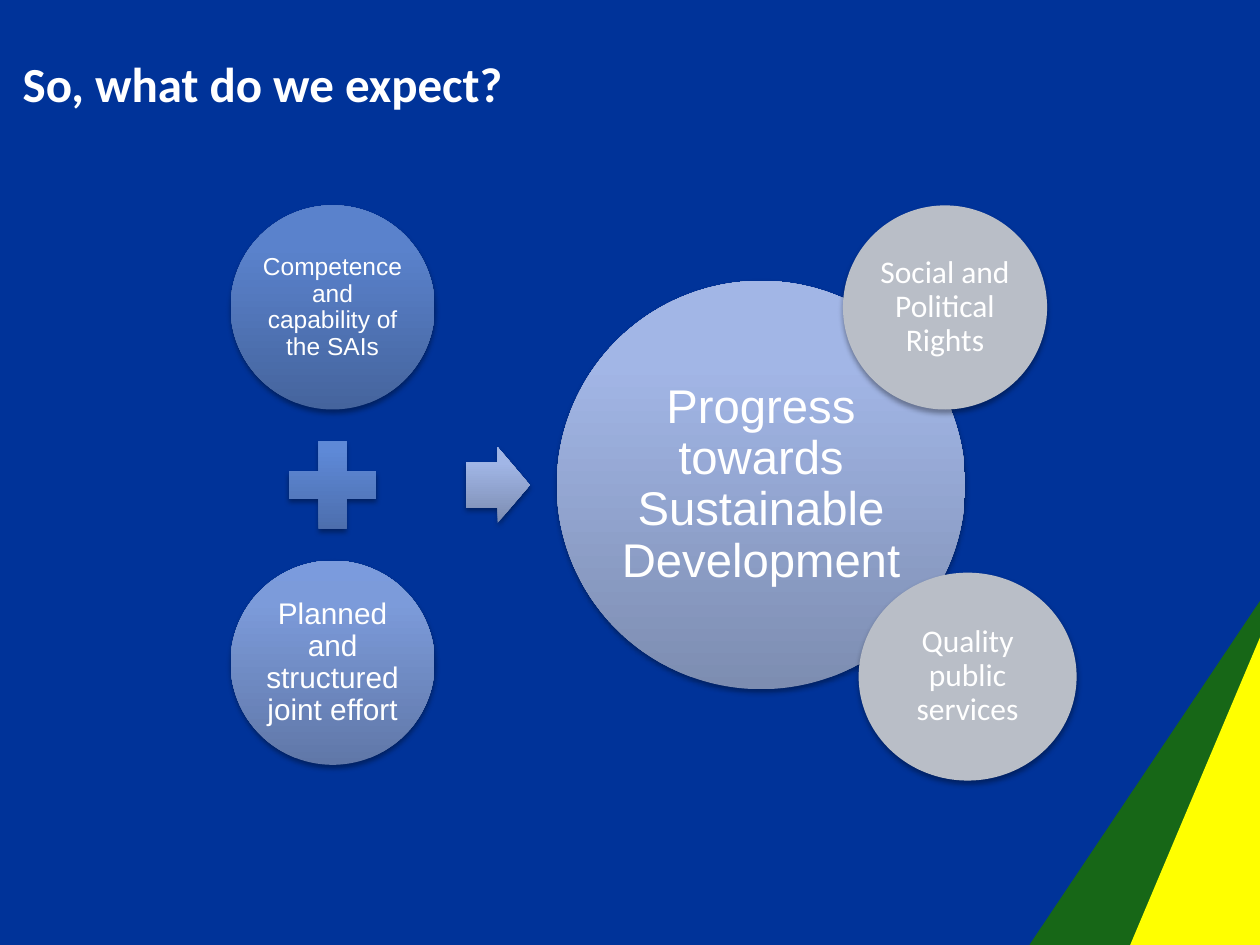
from copy import deepcopy
from dataclasses import dataclass
from typing import Any, Optional

from lxml.etree import SubElement
from pptx import Presentation
from pptx.dml.color import RGBColor
from pptx.enum.shapes import MSO_SHAPE as Preset
from pptx.enum.text import MSO_ANCHOR as Anchor, MSO_AUTO_SIZE as AutoSize, PP_ALIGN as Align
from pptx.oxml.ns import qn
from pptx.util import Inches, Pt


@dataclass(frozen=True)
class Theme:
    """Colours, gradients, fonts and type sizes of the page."""
    background: str = "003399"
    green: str = "176717"
    yellow: str = "FFFF00"
    text: str = "FFFFFF"
    grey: tuple = ("B9BEC7",)
    competence: tuple = ("45649D", "5A82CC", "5882CF")
    plus: tuple = ("4969A5", "5E89D7", "5D88DA")
    effort: tuple = ("6077A8", "7C9BDA", "7B9BDD")
    arrow: tuple = ("7C8CB1", "A1B6E6", "A1B6E9")
    progress: tuple = ("7D8DB1", "A2B6E6", "A1B7E9")
    stops: tuple = (0, 0.8, 1)
    diagram_font: str = "Arial"
    title_font: str = "Calibri"
    title_size: int = 28
    goal_size: int = 27
    outcome_size: int = 18
    effort_size: int = 17
    competence_size: int = 14


@dataclass(frozen=True)
class Label:
    """Wording and type of a label inside a shape."""
    text: str
    size: int
    font: str
    inset: float = 0.02


@dataclass(frozen=True)
class Part:
    """One shape of the diagram, placed by its centre in inches."""
    preset: Preset
    centre: tuple[float, float]
    size: tuple[float, float]
    colours: tuple
    label: Optional[Label] = None


THEME = Theme()
LEFT_X, MIDDLE_Y, STEP = 2.64, 3.85, 1.41
SMALL = (1.62, 1.62)
PARTS = (
    Part(Preset.OVAL, (LEFT_X, MIDDLE_Y - STEP), SMALL, THEME.competence,
         Label("Competence and capability of the SAIs", THEME.competence_size, THEME.diagram_font)),
    Part(Preset.MATH_PLUS, (LEFT_X, MIDDLE_Y), (0.94, 0.94), THEME.plus),
    Part(Preset.OVAL, (LEFT_X, MIDDLE_Y + STEP), SMALL, THEME.effort,
         Label("Planned and structured joint effort", THEME.effort_size, THEME.diagram_font)),
    Part(Preset.RIGHT_ARROW, (3.95, MIDDLE_Y), (0.51, 0.6), THEME.arrow),
    Part(Preset.OVAL, (6.04, MIDDLE_Y), (3.24, 3.24), THEME.progress,
         Label("Progress towards Sustainable Development", THEME.goal_size,
               THEME.diagram_font, 0.04)),
    Part(Preset.OVAL, (7.5, MIDDLE_Y - STEP), SMALL, THEME.grey,
         Label("Social and Political Rights", THEME.outcome_size, THEME.title_font)),
    Part(Preset.OVAL, (7.68, 5.37), (1.73, 1.65), THEME.grey,
         Label("Quality public services", THEME.outcome_size, THEME.title_font)),
)
CORNERS = (
    (THEME.green, ((8.17, 7.5), (10, 4.77), (10, 7.5))),
    (THEME.yellow, ((8.97, 7.5), (10, 5.06), (10, 7.5))),
)


def apply(target: Any, values: dict) -> None:
    """Set each named attribute on the target."""
    for name, value in values.items():
        setattr(target, name, value)


def paint(shape: Any, colours: tuple) -> None:
    """Fill a shape with one colour or an upward gradient, without outline."""
    shape.shadow.inherit = False
    shape.line.fill.background()
    fill = shape.fill
    if len(colours) == 1:
        fill.solid()
        fill.fore_color.rgb = RGBColor.from_string(colours[0])
        return
    fill.gradient()
    fill.gradient_angle = 90
    stop_list = next(shape._element.spPr.iter(qn("a:gsLst")))
    stop_list.append(deepcopy(stop_list[-1]))
    for stop, position, colour in zip(fill.gradient_stops, THEME.stops, colours):
        stop.position = position
        stop.color.rgb = RGBColor.from_string(colour)


def cast_shadow(shape: Any) -> None:
    """Give a shape a soft shadow straight below it."""
    effects = shape._element.spPr.find(qn("a:effectLst"))
    shadow = SubElement(effects, qn("a:outerShdw"), blurRad=str(Pt(3.1)), dist=str(Pt(1.8)),
                        dir="5400000", rotWithShape="0")
    colour = SubElement(shadow, qn("a:srgbClr"), val="000000")
    SubElement(colour, qn("a:alpha"), val="35000")


def write(box: Any, label: Label, align: Align, spacing: float, bold: bool = False) -> None:
    """Write a label into a shape or placeholder."""
    frame = box.text_frame
    apply(frame, {"word_wrap": True, "auto_size": AutoSize.NONE, "vertical_anchor": Anchor.MIDDLE})
    apply(frame, {f"margin_{side}": Inches(label.inset)
                  for side in ("left", "right", "top", "bottom")})
    para = frame.paragraphs[0]
    apply(para, {"alignment": align, "line_spacing": spacing})
    span = para.add_run()
    span.text = label.text
    apply(span.font, {"name": label.font, "size": Pt(label.size), "bold": bold})
    span.font.color.rgb = RGBColor.from_string(THEME.text)


def draw_corner(page: Any, colour: str, points: tuple) -> None:
    """Draw one triangle of the corner ornament."""
    start, *others = [(Inches(x), Inches(y)) for x, y in points]
    builder = page.shapes.build_freeform(*start)
    builder.add_line_segments(others, close=True)
    paint(builder.convert_to_shape(), (colour,))


def draw_part(page: Any, part: Part) -> None:
    """Draw one diagram shape with its label."""
    (x, y), (width, height) = part.centre, part.size
    shape = page.shapes.add_shape(part.preset, Inches(x - width / 2), Inches(y - height / 2),
                                  Inches(width), Inches(height))
    if part.preset == Preset.RIGHT_ARROW:
        shape.adjustments[0] = 0.6
    paint(shape, part.colours)
    cast_shadow(shape)
    if part.label:
        write(shape, part.label, Align.CENTER, 0.9)


def main() -> None:
    """Build and save the deck."""
    deck = Presentation()
    apply(deck, {"slide_width": Inches(10), "slide_height": Inches(7.5)})
    page = deck.slides.add_slide(deck.slide_layouts[5])
    page.background.fill.solid()
    page.background.fill.fore_color.rgb = RGBColor.from_string(THEME.background)
    for colour, points in CORNERS:
        draw_corner(page, colour, points)
    for part in PARTS:
        draw_part(page, part)
    title = page.shapes.title
    apply(title, {"left": Inches(0.08), "top": Inches(0.32),
                  "width": Inches(9.81), "height": Inches(0.67)})
    write(title, Label("So, what do we expect?", THEME.title_size, THEME.title_font, 0.1),
          Align.LEFT, 1.0, bold=True)
    deck.save("out.pptx")


if __name__ == "__main__":
    main()
